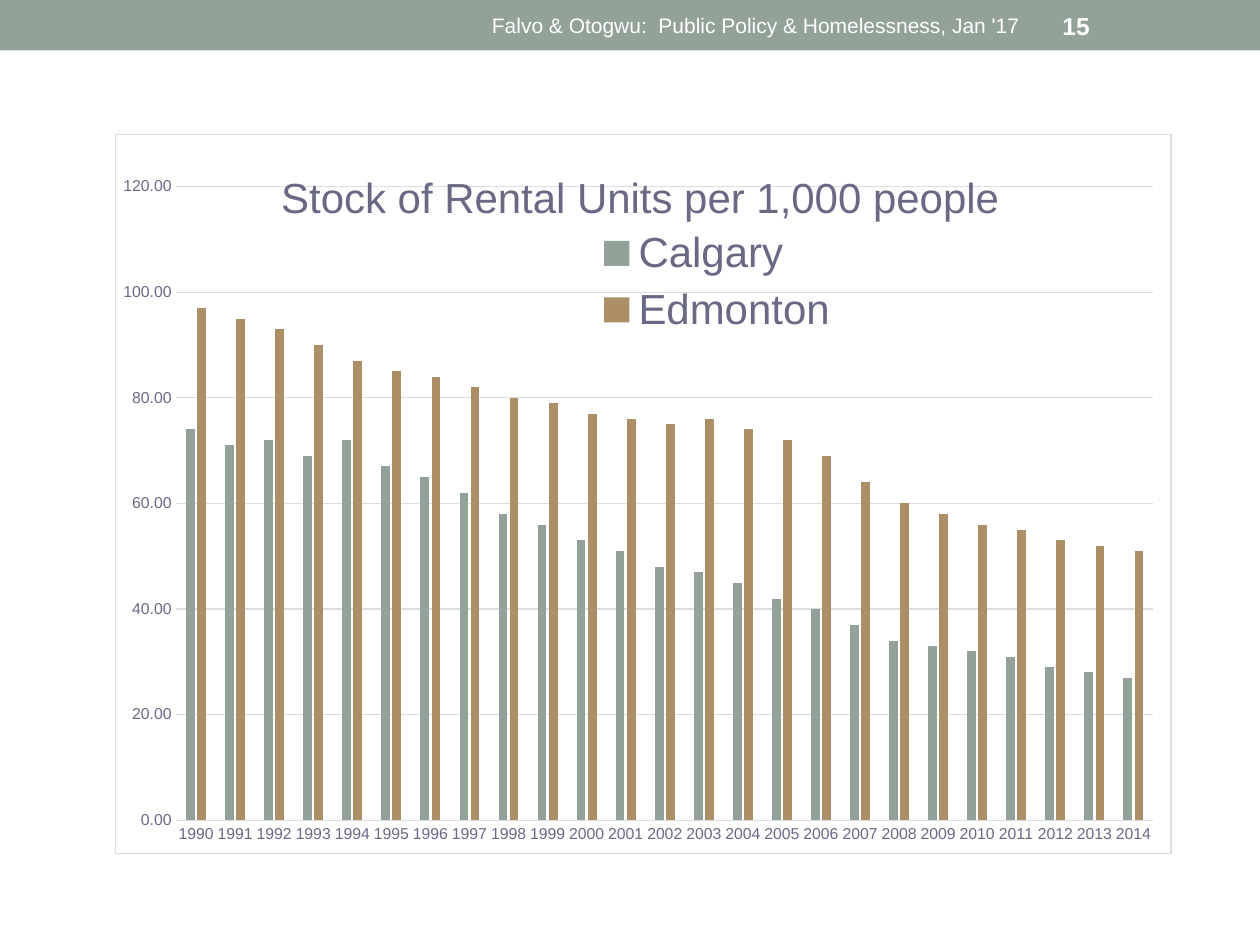
from lxml.etree import SubElement
from pptx import Presentation
from pptx.chart.data import CategoryChartData
from pptx.dml.color import RGBColor
from pptx.enum.chart import XL_CHART_TYPE, XL_LEGEND_POSITION, XL_TICK_MARK
from pptx.enum.shapes import MSO_SHAPE
from pptx.enum.text import MSO_ANCHOR, PP_ALIGN
from pptx.oxml import parse_xml
from pptx.oxml.ns import nsdecls, qn
from pptx.util import Pt

FONT = "Arial"
SAGE, TAN, SLATE, PALE, WHITE = "93A299", "AD8F67", "696986", "DCDCE3", "FFFFFF"

HEADERS = [
    ("Falvo & Otogwu:  Public Policy & Homelessness, Jan '17", 270, 324, 12, False, PP_ALIGN.CENTER),
    ("15", 600, 84, 14, True, PP_ALIGN.LEFT),
]
TITLE = "Stock of Rental Units per 1,000 people"
YEARS = range(1990, 2015)
SERIES = [
    ("Calgary", SAGE, [74, 71, 72, 69, 72, 67, 65, 62, 58, 56, 53, 51, 48,
                       47, 45, 42, 40, 37, 34, 33, 32, 31, 29, 28, 27]),
    ("Edmonton", TAN, [97, 95, 93, 90, 87, 85, 84, 82, 80, 79, 77, 76, 75,
                       76, 74, 72, 69, 64, 60, 58, 56, 55, 53, 52, 51]),
]


def color(value):
    return RGBColor.from_string(value)


def fill(item, value):
    item.fill.solid()
    item.fill.fore_color.rgb = color(value)


def style_font(font, size, value, bold=False):
    font.name, font.size, font.bold = FONT, Pt(size), bold
    font.color.rgb = color(value)


def style_line(line, value):
    line.color.rgb = color(value)
    line.width = Pt(0.75)


def place(element, index, **settings):
    for old in element.findall(qn("c:layout")):
        element.remove(old)
    layout = parse_xml(f"<c:layout {nsdecls('c')}/>")
    manual = SubElement(layout, qn("c:manualLayout"))
    for name, value in settings.items():
        SubElement(manual, qn(f"c:{name}")).set("val", str(value))
    element.insert(index, layout)


def add_header(page, text, left, width, size, bold, align):
    box = page.shapes.add_textbox(Pt(left), Pt(1.5), Pt(width), Pt(26))
    frame = box.text_frame
    frame.word_wrap = True
    frame.vertical_anchor = MSO_ANCHOR.MIDDLE
    frame.text = text
    para = frame.paragraphs[0]
    para.alignment = align
    style_font(para.runs[0].font, size, WHITE, bold)


def add_rental_chart(page):
    data = CategoryChartData(number_format="0.00")
    data.categories = [str(year) for year in YEARS]
    for name, _, values in SERIES:
        data.add_series(name, values)
    chart = page.shapes.add_chart(
        XL_CHART_TYPE.COLUMN_CLUSTERED, Pt(65.5), Pt(76.3), Pt(604), Pt(411.8), data
    ).chart
    style_font(chart.font, 10, "292934")

    chart.has_title = True
    title = chart.chart_title
    title.text_frame.text = TITLE
    style_font(title.text_frame.paragraphs[0].runs[0].font, 24, SLATE)
    title_xml = title._element
    place(title_xml, 1, xMode="edge", yMode="edge", x=0.15, y=0.04)
    title_xml.find(qn("c:overlay")).set("val", "1")

    chart.has_legend = True
    legend = chart.legend
    legend.position = XL_LEGEND_POSITION.TOP
    legend.include_in_layout = True
    style_font(legend.font, 24, SLATE)
    place(legend._element, 1, xMode="edge", yMode="edge", x=0.45, y=0.12, w=0.24, h=0.17)

    plot = chart.plots[0]
    plot.gap_width, plot.overlap = 219, -27
    plot.vary_by_categories = False
    for series, (_, shade, _) in zip(plot.series, SERIES):
        fill(series.format, shade)
    place(chart._chartSpace.chart.plotArea, 0, layoutTarget="inner", xMode="edge",
          yMode="edge", x=0.058, y=0.073, w=0.925, h=0.881)

    years, units = chart.category_axis, chart.value_axis
    for axis in (years, units):
        axis.major_tick_mark = axis.minor_tick_mark = XL_TICK_MARK.NONE
        style_font(axis.tick_labels.font, 9, SLATE)
    style_line(years.format.line, PALE)
    units.minimum_scale, units.maximum_scale, units.major_unit = 0, 120, 20
    units.format.line.fill.background()
    units.has_major_gridlines = True
    style_line(units.major_gridlines.format.line, PALE)
    units.tick_labels.number_format = "0.00"
    units.tick_labels.number_format_is_linked = False

    chart._chartSpace.chart.addnext(parse_xml(
        f"<c:spPr {nsdecls('c', 'a')}>"
        f'<a:solidFill><a:srgbClr val="{WHITE}"/></a:solidFill>'
        f'<a:ln w="{Pt(0.75)}"><a:solidFill><a:srgbClr val="{PALE}"/></a:solidFill></a:ln>'
        "</c:spPr>"
    ))


def main():
    deck = Presentation()
    deck.slide_width, deck.slide_height = Pt(720), Pt(540)
    page = deck.slides.add_slide(deck.slide_layouts[6])
    band = page.shapes.add_shape(MSO_SHAPE.RECTANGLE, 0, 0, deck.slide_width, Pt(28.8))
    band.shadow.inherit = False
    fill(band, SAGE)
    band.line.fill.background()
    for header in HEADERS:
        add_header(page, *header)
    add_rental_chart(page)
    deck.save("out.pptx")


if __name__ == "__main__":
    main()
